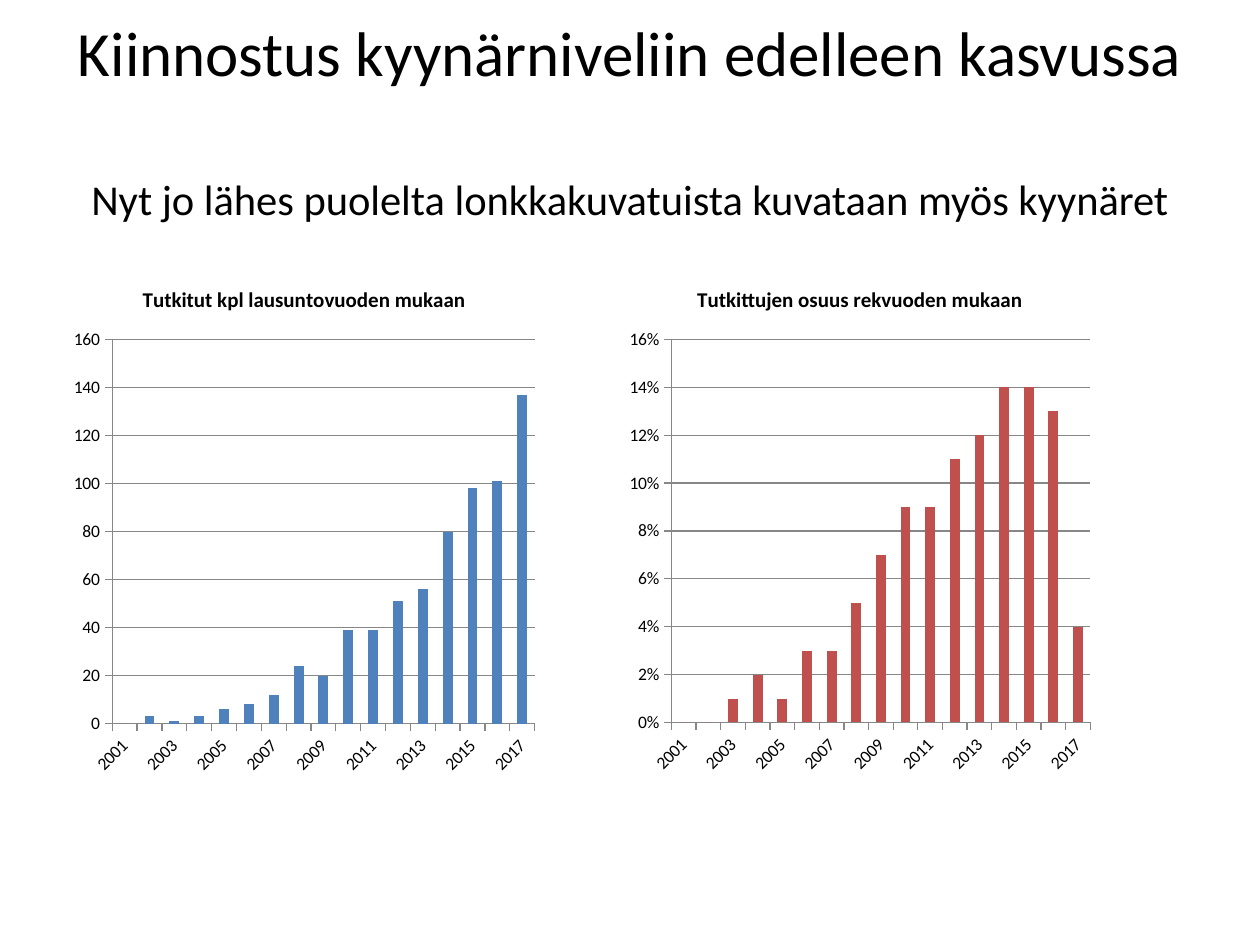
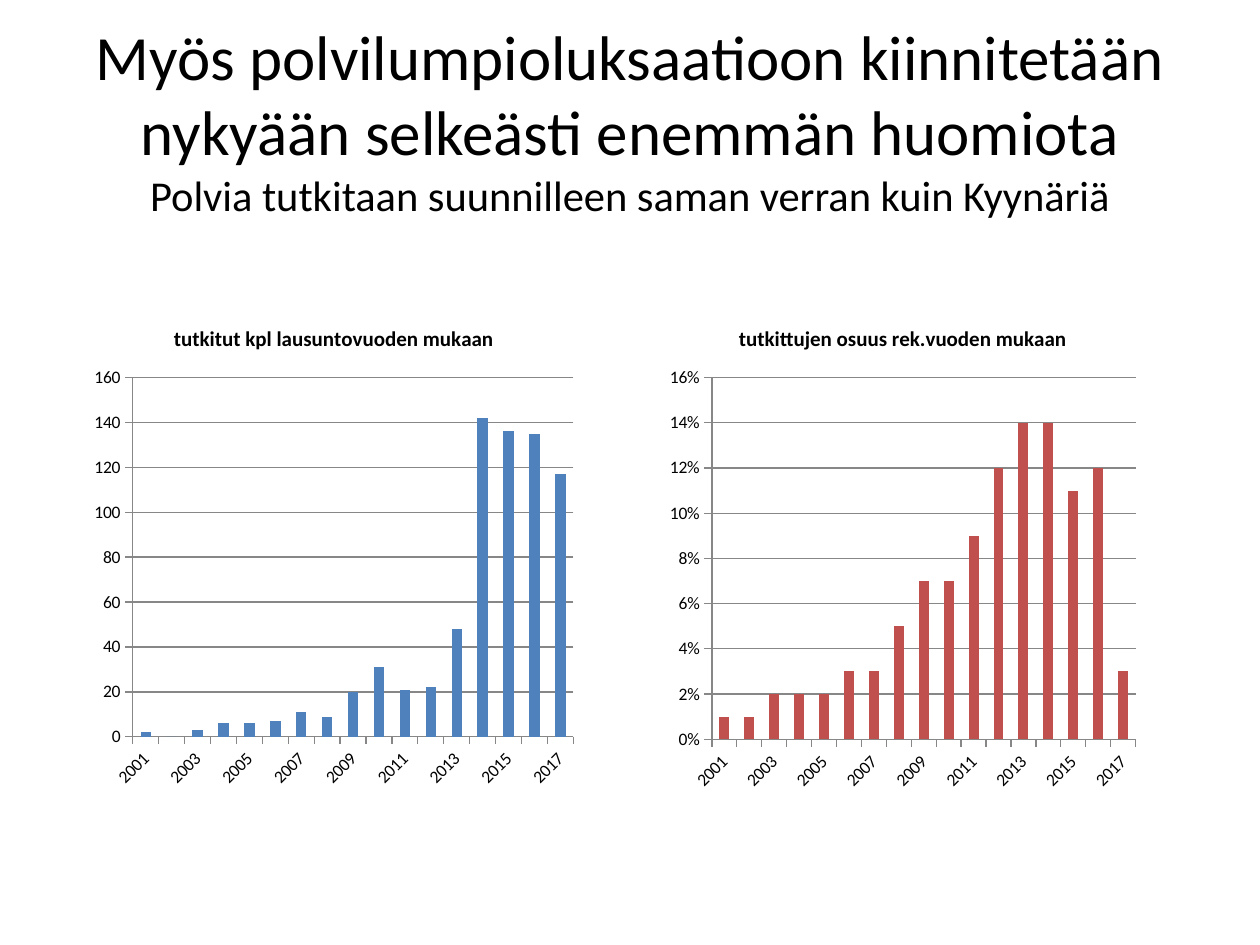
"""Builds two slides comparing yearly counts and shares of examined joints."""
from dataclasses import dataclass

from pptx import Presentation
from pptx.chart.data import CategoryChartData
from pptx.dml.color import RGBColor
from pptx.enum.chart import XL_CHART_TYPE, XL_TICK_MARK
from pptx.enum.text import MSO_ANCHOR, PP_ALIGN
from pptx.oxml.ns import qn
from pptx.oxml.xmlchemy import OxmlElement
from pptx.util import Inches, Pt

COLUMNS = XL_CHART_TYPE.COLUMN_CLUSTERED
TICK_OUT = XL_TICK_MARK.OUTSIDE
MIDDLE = MSO_ANCHOR.MIDDLE
CENTER = PP_ALIGN.CENTER

FONT = "Calibri"
BLACK, GRAY, BLUE, RED = "000000", "878787", "4F81BD", "C0504D"
YEARS = [str(year) for year in range(2001, 2018)]


@dataclass(frozen=True)
class Measure:
    """Style and scale shared by all charts of one kind."""
    color: str
    number_format: str
    divisor: int
    top: float
    step: float


COUNT = Measure(BLUE, "General", 1, 160, 20)
SHARE = Measure(RED, "0%", 100, 0.16, 0.02)


@dataclass(frozen=True)
class YearChart:
    """One column chart with its place in inches."""
    title: str
    measure: Measure
    box: tuple[float, float, float, float]
    values: tuple[int, ...]


@dataclass(frozen=True)
class JointSlide:
    """Heading, subheading and charts of one slide."""
    heading: str
    subheading: str
    gap: int
    charts: tuple[YearChart, ...]


SLIDES = (
    JointSlide(
        "Kiinnostus kyynärniveliin edelleen kasvussa",
        "Nyt jo lähes puolelta lonkkakuvatuista kuvataan myös kyynäret",
        48,
        (
            YearChart("Tutkitut kpl lausuntovuoden mukaan", COUNT, (0.51, 2.1, 3.81, 4.13),
                      (0, 3, 1, 3, 6, 8, 12, 24, 20, 39, 39, 51, 56, 80, 98, 101, 137)),
            YearChart("Tutkittujen osuus rekvuoden mukaan", SHARE, (4.92, 2.1, 3.81, 4.12),
                      (0, 0, 1, 2, 1, 3, 3, 5, 7, 9, 9, 11, 12, 14, 14, 13, 4)),
        ),
    ),
    JointSlide(
        "Myös polvilumpioluksaatioon kiinnitetään nykyään selkeästi enemmän huomiota",
        "Polvia tutkitaan suunnilleen saman verran kuin Kyynäriä",
        0,
        (
            YearChart("tutkitut kpl lausuntovuoden mukaan", COUNT, (0.67, 2.41, 3.96, 3.92),
                      (2, 0, 3, 6, 6, 7, 11, 9, 20, 31, 21, 22, 48, 142, 136, 135, 117)),
            YearChart("tutkittujen osuus rek.vuoden mukaan", SHARE, (5.24, 2.41, 3.85, 3.94),
                      (1, 1, 2, 2, 2, 3, 3, 5, 7, 7, 9, 12, 14, 14, 11, 12, 3)),
        ),
    ),
)


def rgb(color: str) -> RGBColor:
    """Turn a hex string into a colour."""
    return RGBColor.from_string(color)


def write(p, text: str, *, size: float, bold: bool = False, before: int = 0) -> None:
    """Write centred text into a paragraph."""
    p.alignment = CENTER
    p.space_before = Pt(before)
    r = p.add_run()
    r.text = text
    r.font.name = FONT
    r.font.size = Pt(size)
    r.font.bold = bold
    r.font.color.rgb = rgb(BLACK)


def add_title(s, joint: JointSlide) -> None:
    """Add the heading with its subheading."""
    sp = s.shapes.add_textbox(Inches(0.5), Inches(0.3), Inches(9), Inches(1.28))
    tf = sp.text_frame
    tf.word_wrap = True
    tf.vertical_anchor = MIDDLE
    tf.margin_left = tf.margin_right = Inches(0.05)
    write(tf.paragraphs[0], joint.heading, size=36)
    write(tf.add_paragraph(), joint.subheading, size=24.3, before=joint.gap)


def style_axes(chart, measure: Measure) -> None:
    """Set scale, ticks, lines and slanted year labels."""
    value, category = chart.value_axis, chart.category_axis
    value.minimum_scale = 0
    value.maximum_scale = measure.top
    value.major_unit = measure.step
    value.tick_labels.number_format = measure.number_format
    value.tick_labels.number_format_is_linked = False
    for axis in (value, category):
        axis.major_tick_mark = TICK_OUT
    for line in (value.format.line, category.format.line, value.major_gridlines.format.line):
        line.color.rgb = rgb(GRAY)
        line.width = Pt(0.75)
    category.tick_labels.font.size = Pt(10)
    ax = category._element
    ax.find(qn("c:txPr")).find(qn("a:bodyPr")).set("rot", "-2700000")
    skip = OxmlElement("c:tickLblSkip")
    skip.set("val", "2")
    ax.find(qn("c:noMultiLvlLbl")).addprevious(skip)


def add_year_chart(s, spec_chart: YearChart) -> None:
    """Add a titled column chart over the years."""
    measure = spec_chart.measure
    data = CategoryChartData(number_format=measure.number_format)
    data.categories = YEARS
    data.add_series("Series 1", [v / measure.divisor for v in spec_chart.values])
    box = map(Inches, spec_chart.box)
    chart = s.shapes.add_chart(COLUMNS, *box, data).chart
    chart.font.name = FONT
    chart.font.size = Pt(10)
    chart.font.color.rgb = rgb(BLACK)
    chart.has_legend = False
    chart.has_title = True
    write(chart.chart_title.text_frame.paragraphs[0], spec_chart.title, size=12, bold=True)
    chart.chart_title.include_in_layout = False
    plot = chart.plots[0]
    plot.gap_width = 150
    plot.vary_by_categories = False
    fill = plot.series[0].format.fill
    fill.solid()
    fill.fore_color.rgb = rgb(measure.color)
    style_axes(chart, measure)


def main() -> None:
    """Build and save the presentation."""
    prs = Presentation()
    prs.slide_width, prs.slide_height = Inches(10), Inches(7.5)
    for joint in SLIDES:
        s = prs.slides.add_slide(prs.slide_layouts[6])
        add_title(s, joint)
        for year_chart in joint.charts:
            add_year_chart(s, year_chart)
    prs.save("out.pptx")


if __name__ == "__main__":
    main()
